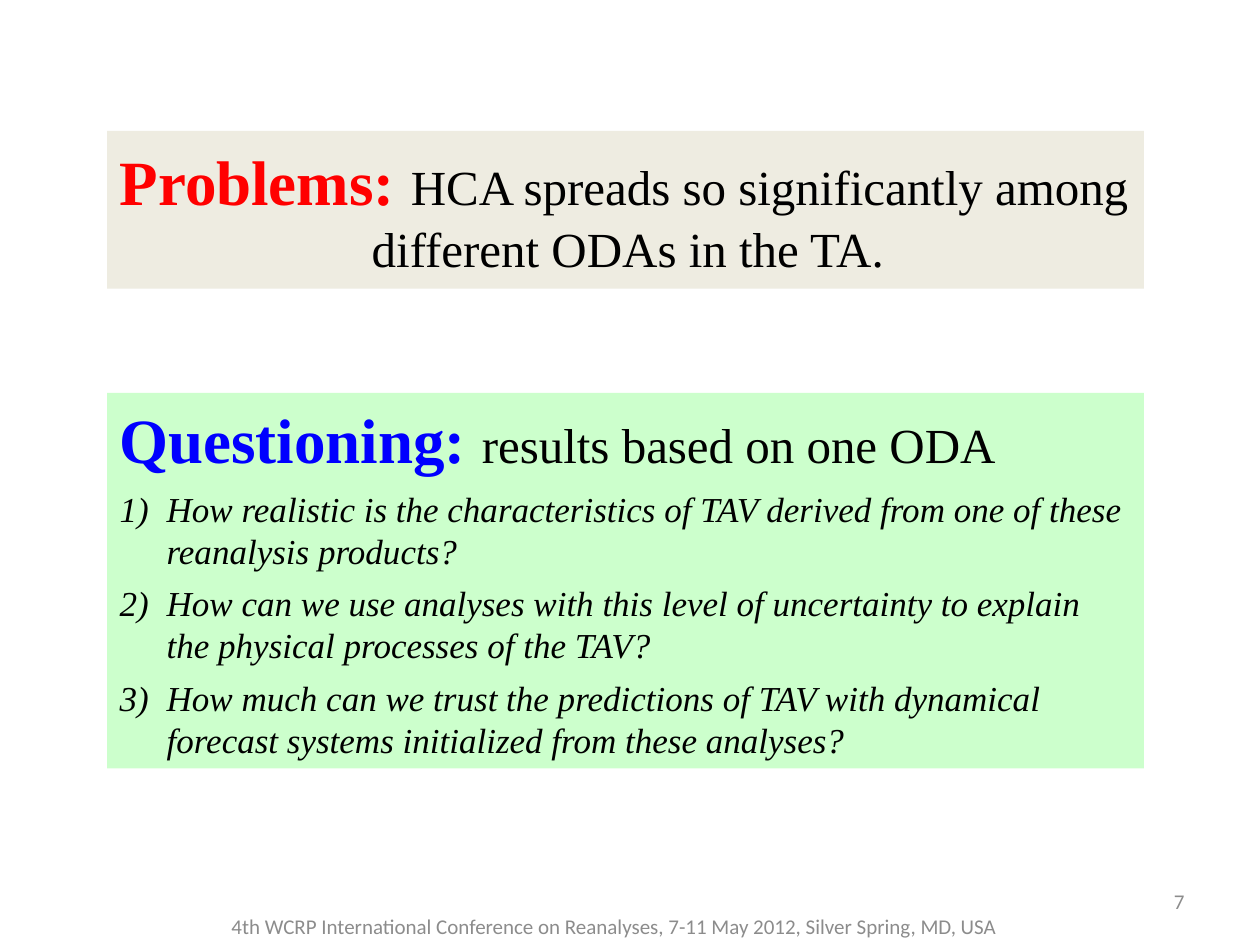
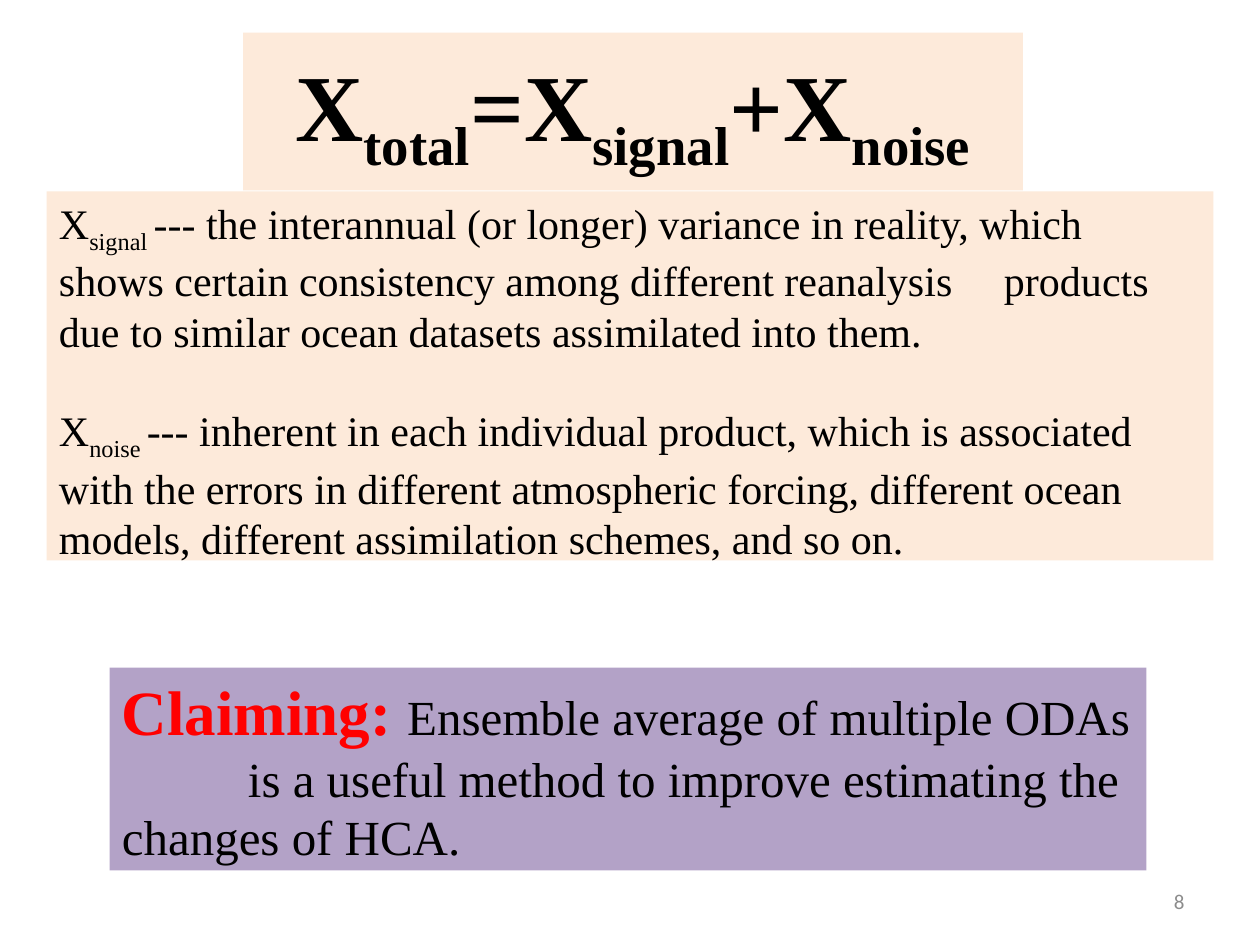
from dataclasses import dataclass

from lxml import etree
from pptx import Presentation
from pptx.dml.color import RGBColor
from pptx.enum.shapes import MSO_SHAPE
from pptx.enum.text import MSO_ANCHOR, MSO_AUTO_SIZE, PP_ALIGN
from pptx.oxml.ns import qn
from pptx.util import Cm, Pt

RECT = MSO_SHAPE.RECTANGLE
TOP, MIDDLE = MSO_ANCHOR.TOP, MSO_ANCHOR.MIDDLE
LEFT, CENTER, RIGHT = PP_ALIGN.LEFT, PP_ALIGN.CENTER, PP_ALIGN.RIGHT
NO_AUTOFIT = MSO_AUTO_SIZE.NONE
TITLE_ONLY = 5
SERIF, SANS = "Times New Roman", "Calibri"
COLORS = {
    "black": "000000",
    "red": "FF0000",
    "blue": "0000FF",
    "gray": "8C8C8C",
    "beige": "EEECE1",
    "green": "CCFFCC",
    "peach": "FDEADA",
    "purple": "B3A2C7",
}


@dataclass(frozen=True)
class Span:
    text: str
    size: float
    color: str = "black"
    bold: bool = False
    italic: bool = False
    subscript: bool = False
    font: str = SERIF


@dataclass(frozen=True)
class Para:
    spans: tuple[Span, ...]
    align: PP_ALIGN = LEFT
    before: float = 0
    hanging: float = 0
    numbered: bool = False
    tab: float = 0


@dataclass(frozen=True)
class Box:
    left: float
    top: float
    width: float
    height: float
    paras: tuple[Para, ...]
    fill: str = ""
    anchor: MSO_ANCHOR = MIDDLE


def rgb(name: str) -> RGBColor:
    return RGBColor.from_string(COLORS[name])


def add_span(p, span: Span) -> None:
    for i, line in enumerate(span.text.split("\n")):
        if i:
            p.add_line_break()
        r = p.add_run()
        r.text = line
        f = r.font
        f.name, f.size = span.font, Pt(span.size)
        f.bold, f.italic = span.bold, span.italic
        f.color.rgb = rgb(span.color)
        if span.subscript:
            r._r.get_or_add_rPr().set("baseline", "-25000")


def write_para(p, para: Para) -> None:
    p.alignment = para.align
    p.space_before = Pt(para.before)
    pPr = p._p.get_or_add_pPr()
    if para.hanging:
        pPr.set("marL", str(Cm(para.hanging)))
        pPr.set("indent", str(-Cm(para.hanging)))
    if para.numbered:
        etree.SubElement(pPr, qn("a:buAutoNum"), type="arabicParenR")
    if para.tab:
        tabs = etree.SubElement(pPr, qn("a:tabLst"))
        etree.SubElement(tabs, qn("a:tab"), pos=str(Cm(para.tab)), algn="l")
    for span in para.spans:
        add_span(p, span)


def fill_box(sp, box: Box) -> None:
    sp.left, sp.top = Cm(box.left), Cm(box.top)
    sp.width, sp.height = Cm(box.width), Cm(box.height)
    if box.fill:
        sp.fill.solid()
        sp.fill.fore_color.rgb = rgb(box.fill)
        sp.line.fill.background()
    tf = sp.text_frame
    tf.word_wrap = True
    tf.auto_size = NO_AUTOFIT
    tf.vertical_anchor = box.anchor
    for i, para in enumerate(box.paras):
        write_para(tf.add_paragraph() if i else tf.paragraphs[0], para)


def add_box(s, box: Box) -> None:
    place = Cm(box.left), Cm(box.top), Cm(box.width), Cm(box.height)
    if box.fill:
        sp = s.shapes.add_shape(RECT, *place)
        sp.shadow.inherit = False
    else:
        sp = s.shapes.add_textbox(*place)
    fill_box(sp, box)


def small_print(text: str, align: PP_ALIGN) -> tuple[Para, ...]:
    return (Para((Span(text, 12, "gray", font=SANS),), align),)


def add_slide(prs, number: int, title: Box, boxes: tuple[Box, ...]) -> None:
    s = prs.slides.add_slide(prs.slide_layouts[TITLE_ONLY])
    fill_box(s.shapes.title, title)
    add_box(s, Box(18.21, 17.65, 5.92, 1.02, small_print(str(number), RIGHT)))
    for box in boxes:
        add_box(s, box)


def lead(label: str, color: str, text: str) -> tuple[Span, ...]:
    return Span(label, 36, color, bold=True), Span(text, 28)


def definition(index: str, text: str) -> tuple[Span, ...]:
    return Span("X", 24), Span(index, 24, subscript=True), Span(text, 24)


QUESTIONS = (
    "How realistic is the characteristics of TAV derived from one of these reanalysis products?",
    "How can we use analyses with this level of uncertainty to explain the physical processes of the TAV?",
    "How much can we trust the predictions of TAV with dynamical forecast systems initialized from these analyses?",
)
EQUATION = ("X", "total", "=X", "signal", "+X", "noise")

PROBLEMS = Box(2.16, 2.64, 20.9, 3.18, (
    Para(lead("Problems: ", "red",
              "HCA spreads so significantly among different ODAs in the TA."), hanging=5.08),
), "beige")
CONFERENCE = Box(4.37, 18.16, 16.03, 1.02, small_print(
    "4th WCRP International Conference on Reanalyses, 7-11 May 2012, Silver Spring, MD, USA", CENTER))
QUESTIONING = Box(2.16, 7.92, 20.9, 7.57, (
    Para(lead("Questioning: ", "blue", "results based on one ODA")),
    *(Para((Span(q, 20, italic=True),), before=6, hanging=0.95, numbered=True) for q in QUESTIONS),
), "green")

VARIANCE = Box(4.9, 0.66, 15.72, 3.18, (
    Para(tuple(Span(t, 54, bold=True, subscript=i % 2 == 1) for i, t in enumerate(EQUATION)), CENTER),
), "peach")
CLAIMING = Box(2.21, 13.46, 20.9, 4.09, (
    Para(lead("Claiming: ", "red",
              "Ensemble average of multiple ODAs\n"
              "\tis a useful method to improve estimating the\nchanges of HCA."),
         before=18, tab=2.54),
), "purple")
DEFINITIONS = Box(0.94, 3.86, 23.52, 7.44, (
    Para(definition("signal ",
                    "--- the interannual (or longer) variance in reality, which\n"
                    "shows certain consistency among different reanalysis\tproducts "
                    "due to similar ocean datasets assimilated into them."), tab=19.05),
    Para(definition("noise ",
                    "--- inherent in each individual product, which is associated "
                    "with the errors in different atmospheric forcing, different ocean "
                    "models, different assimilation schemes, and so on."), before=28),
), "peach", TOP)


def main() -> None:
    prs = Presentation()
    prs.slide_width, prs.slide_height = Cm(25.4), Cm(19.05)
    add_slide(prs, 7, PROBLEMS, (CONFERENCE, QUESTIONING))
    add_slide(prs, 8, VARIANCE, (CLAIMING, DEFINITIONS))
    prs.save("out.pptx")


if __name__ == "__main__":
    main()
